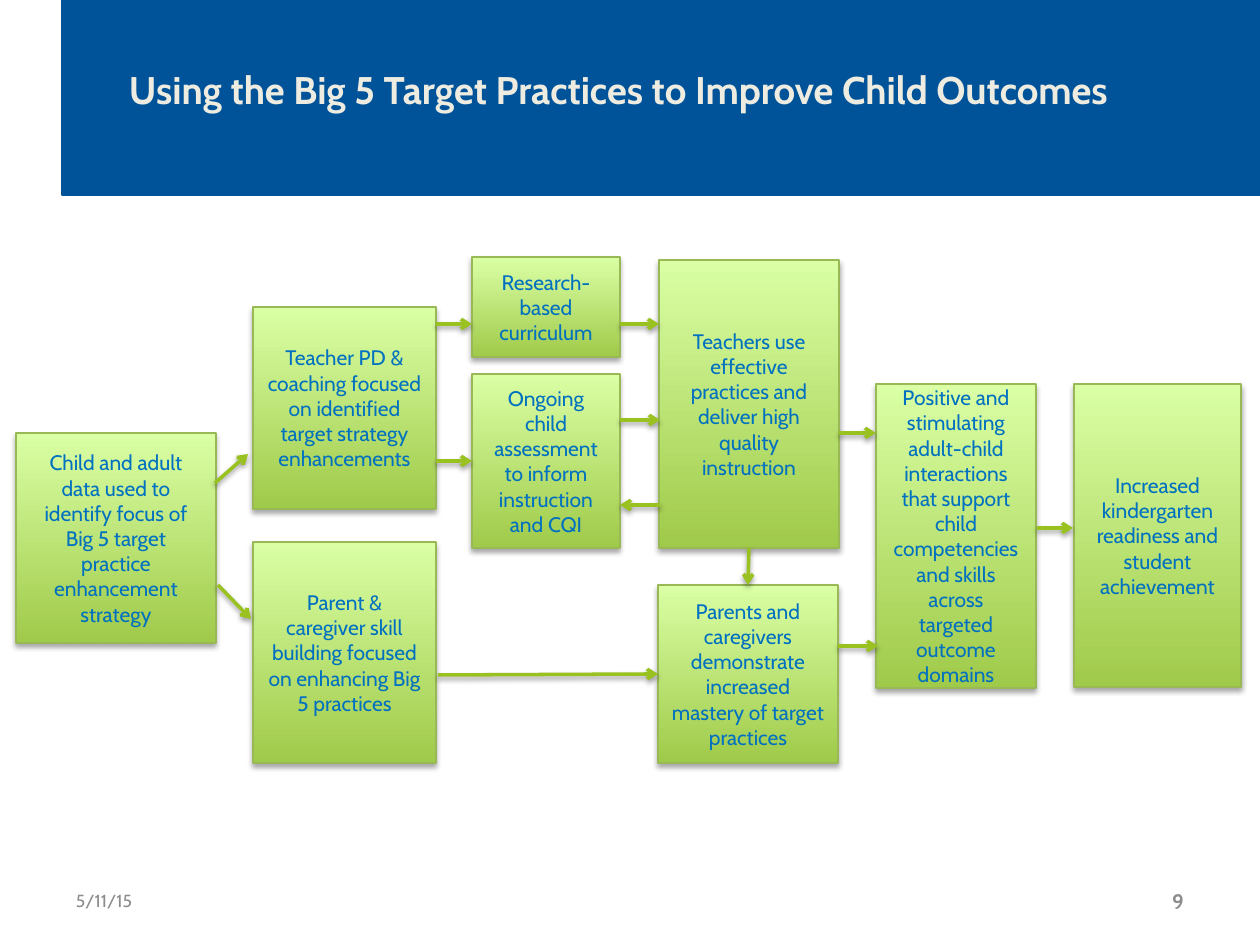
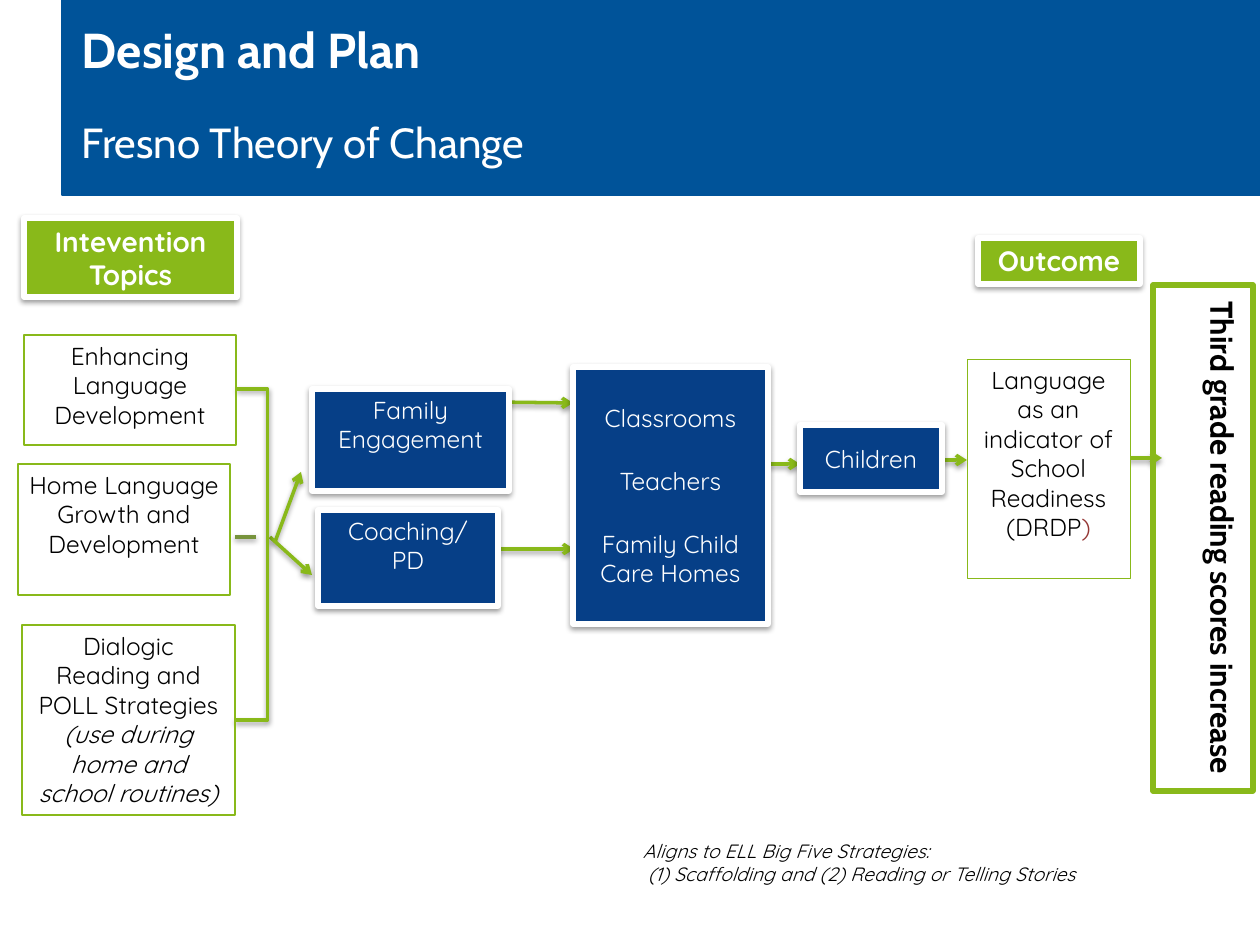
from lxml import etree
from pptx import Presentation
from pptx import util as u
from pptx.dml.color import RGBColor
from pptx.enum import shapes, text
from pptx.oxml.ns import qn

PX = u.Inches(1) / 126
WHITE, BLACK = "FFFFFF", "000000"
BAND_BLUE, NAVY, LINK_BLUE = "005399", "063F87", "0070C0"
GREEN, ARROW_GREEN, BOX_EDGE = "89B91A", "99C221", "98B955"
GRADIENT = ("A0CA4A", "DAFFA5")
TITLE_FONT, BODY_FONT = "Cabin", "Quicksand"
LEFT, CENTER, RIGHT = (text.PP_ALIGN.LEFT, text.PP_ALIGN.CENTER,
                       text.PP_ALIGN.RIGHT)
TOP, MIDDLE = text.MSO_ANCHOR.TOP, text.MSO_ANCHOR.MIDDLE


def px(*lengths):
    return [u.Emu(round(length * PX)) for length in lengths]


def rgb(hex_color):
    return RGBColor.from_string(hex_color)


def add_shadow(shape, alpha, distance):
    """Give a shape or connector a soft shadow straight below it."""
    properties = shape._element.spPr
    effects = properties.find(qn("a:effectLst"))
    if effects is None:
        effects = etree.SubElement(properties, qn("a:effectLst"))
    outer = etree.SubElement(
        effects, qn("a:outerShdw"), blurRad=str(u.Pt(3.1)),
        dist=str(u.Pt(distance)), dir="5400000", rotWithShape="0")
    black = etree.SubElement(outer, qn("a:srgbClr"), val=BLACK)
    etree.SubElement(black, qn("a:alpha"), val=str(alpha * 1000))


def style(run, size, color, font, bold=False, italic=False):
    run.font.size = u.Pt(size)
    run.font.color.rgb = rgb(color)
    run.font.name = font
    run.font.bold = bold
    run.font.italic = italic


class Deck:
    def __init__(self):
        self.presentation = Presentation()
        self.presentation.slide_width, self.presentation.slide_height = px(1260, 945)
        self.slide = None

    def add_slide(self, title_lines, at, formats, gap=0):
        """Start a slide with the blue band and its title."""
        self.slide = self.presentation.slides.add_slide(
            self.presentation.slide_layouts[5])
        band = self.rectangle((62, 0, 1198, 195), BAND_BLUE, BAND_BLUE)
        self.slide.shapes._spTree.insert(2, band._element)
        title = self.slide.shapes.title
        title.left, title.top, title.width, title.height = px(*at)
        self.set_lines(title, title_lines, 22, WHITE, TITLE_FONT,
                       align=LEFT, gap=gap)
        for paragraph, (size, color, bold) in zip(
                title.text_frame.paragraphs, formats):
            style(paragraph.runs[0], size, color, TITLE_FONT, bold)

    def set_lines(self, shape, lines, size, color, font, align=CENTER,
                  anchor=TOP, gap=0, inset=13, bold=False, italic=False):
        frame = shape.text_frame
        frame.word_wrap = True
        frame.auto_size = text.MSO_AUTO_SIZE.NONE
        frame.vertical_anchor = anchor
        frame.margin_left, frame.margin_right = px(inset, inset)
        frame.margin_top, frame.margin_bottom = px(6, 6)
        frame.text = "\n".join(lines)
        for number, paragraph in enumerate(frame.paragraphs):
            paragraph.alignment = align
            if number and gap:
                paragraph.space_before = u.Pt(gap)
            for run in paragraph.runs:
                style(run, size, color, font, bold, italic)

    def rectangle(self, at, fill, edge, weight=0.75):
        shape = self.slide.shapes.add_shape(
            shapes.MSO_SHAPE.RECTANGLE, *px(*at))
        if fill is None:
            shape.fill.background()
        elif isinstance(fill, tuple):
            shape.fill.gradient()
            shape.fill.gradient_angle = 90
            for stop, color in zip(shape.fill.gradient_stops, fill):
                stop.color.rgb = rgb(color)
        else:
            shape.fill.solid()
            shape.fill.fore_color.rgb = rgb(fill)
        shape.line.color.rgb = rgb(edge)
        shape.line.width = u.Pt(weight)
        shape.shadow.inherit = False
        return shape

    def step(self, at, *lines):
        """Add a shaded green step of the improvement process."""
        shape = self.rectangle(at, GRADIENT, BOX_EDGE)
        add_shadow(shape, 35, 1.8)
        self.set_lines(shape, lines, 12, LINK_BLUE, TITLE_FONT, anchor=MIDDLE)
        return shape

    def card(self, at, lines, fill, size=14, bold=False, **layout):
        """Add a solid box with a white frame."""
        shape = self.rectangle(at, fill, WHITE, 3)
        add_shadow(shape, 38, 1.6)
        self.set_lines(shape, lines, size, WHITE, BODY_FONT, inset=11,
                       bold=bold, **layout)

    def outlined(self, at, lines, fill=None, weight=0.75, inset=11):
        shape = self.rectangle(at, fill, GREEN, weight)
        self.set_lines(shape, lines, 14, BLACK, BODY_FONT, inset=inset)
        return shape.text_frame

    def label(self, at, lines, *look, **layout):
        box = self.slide.shapes.add_textbox(*px(*at))
        self.set_lines(box, lines, *look, **layout)
        return box.text_frame

    def connector(self, start, end, color, arrow=True,
                  kind=shapes.MSO_CONNECTOR.STRAIGHT):
        line = self.slide.shapes.add_connector(kind, *px(*start, *end))
        line.line.color.rgb = rgb(color)
        line.line.width = u.Pt(2)
        if arrow:
            etree.SubElement(line._element.spPr.find(qn("a:ln")),
                             qn("a:tailEnd"), type="arrow")
        add_shadow(line, 38, 1.6)
        return line

    def bracket(self, start, end, spine_x, color):
        """Add an elbow connector whose upright part runs at spine_x."""
        line = self.connector(start, end, color, False,
                              shapes.MSO_CONNECTOR.ELBOW)
        share = (spine_x - start[0]) / (end[0] - start[0])
        geometry = line._element.spPr.find(qn("a:prstGeom"))
        guides = geometry.find(qn("a:avLst"))
        etree.SubElement(guides, qn("a:gd"), name="adj1",
                         fmla=f"val {round(share * 100000)}")


def add_big_five(deck):
    deck.add_slide(["Using the Big 5 Target Practices to Improve Child Outcomes"],
                   (116, 60, 1019, 106), [(22, "EEECE1", True)])
    deck.step((876, 384, 160, 304),
              "Positive and stimulating adult-child interactions that support "
              "child competencies and skills across targeted outcome domains")
    deck.step((1074, 384, 167, 303),
              "Increased kindergarten readiness and student achievement")
    deck.step((16, 433, 200, 210),
              "Child and adult data used to identify focus of Big 5 target "
              "practice enhancement strategy")
    deck.step((253, 307, 183, 202),
              "Teacher PD & coaching focused on identified target strategy "
              "enhancements")
    deck.step((253, 542, 183, 221),
              "Parent & caregiver skill building focused on enhancing Big 5 "
              "practices")
    teachers = deck.step((659, 260, 180, 288),
                         "Teachers use effective practices and deliver high "
                         "quality instruction")
    parents = deck.step((658, 585, 180, 178),
                        "Parents and caregivers demonstrate increased mastery "
                        "of target practices")
    deck.step((472, 257, 148, 100), "Research-based", "curriculum")
    assessment = deck.step((472, 374, 148, 174),
                           "Ongoing child assessment to inform instruction and CQI")

    for start, end in [
            ((215, 483), (248, 454)), ((218, 585), (251, 619)),
            ((660, 505), (620, 505)), ((838, 646), (878, 646)),
            ((1037, 528), (1073, 528)), ((436, 324), (472, 324)),
            ((620, 324), (659, 324)), ((839, 433), (876, 433)),
            ((620, 420), (660, 420))]:
        deck.connector(start, end, ARROW_GREEN)
    to_assessment = deck.connector((436, 461), (472, 461), ARROW_GREEN)
    to_assessment.end_connect(assessment, 1)
    to_mastery = deck.connector((438, 675), (658, 674), ARROW_GREEN)
    to_mastery.end_connect(parents, 1)
    teachers_to_parents = deck.connector((749, 548), (748, 585), ARROW_GREEN)
    teachers_to_parents.begin_connect(teachers, 2)
    teachers_to_parents.end_connect(parents, 0)

    footer = "8C8C8C", TITLE_FONT
    deck.label((63, 876, 294, 50), ["5/11/15"], 10, *footer,
               align=LEFT, anchor=MIDDLE)
    deck.label((903, 876, 294, 50), ["9"], 12, *footer,
               align=RIGHT, anchor=MIDDLE, bold=True)


def add_theory_of_change(deck):
    deck.add_slide(["Design and Plan", "Fresno Theory of Change"],
                   (69, 13, 1090, 251),
                   [(28, WHITE, True), (24, WHITE, False)], gap=22)
    for start, end in [
            ((1125, 458), (1162, 458)), ((930, 460), (967, 460)),
            ((769, 464), (800, 464)), ((494, 549), (574, 549)),
            ((489, 402), (573, 403)), ((275, 542), (301, 472)),
            ((270, 537), (312, 575))]:
        deck.connector(start, end, GREEN)
    deck.bracket((237, 389), (235, 720), 268, GREEN)
    deck.connector((235, 537), (256, 537), "77933C", arrow=False)

    deck.card((24, 218, 213, 79), ["Intevention Topics"], GREEN, 16, True)
    deck.card((978, 238, 162, 46), ["Outcome"], GREEN, 16, True)
    deck.card((312, 389, 197, 102), ["Family", "Engagement"], NAVY)
    deck.card((318, 510, 180, 96), ["Coaching/", "PD"], NAVY)
    deck.card((573, 367, 195, 257),
              ["Classrooms", "Teachers", "Family Child Care Homes"], NAVY,
              anchor=MIDDLE, gap=19)
    deck.card((800, 425, 142, 67), ["Children"], NAVY, anchor=MIDDLE)

    deck.outlined((24, 335, 212, 110), ["Enhancing Language Development"])
    deck.outlined((18, 464, 212, 131),
                  ["Home Language", "Growth and Development"])
    dialogic = deck.outlined((22, 625, 213, 190),
                             ["Dialogic Reading and POLL Strategies "], inset=13)
    routines = dialogic.paragraphs[0].add_run()
    routines.text = "(use during home and school routines)"
    style(routines, 14, BLACK, BODY_FONT, italic=True)
    readiness = deck.outlined(
        (967, 359, 163, 219),
        ["Language as an", "indicator of School Readiness", "(DRDP"], WHITE, 0.25)
    closing = readiness.paragraphs[-1].add_run()
    closing.text = ")"
    style(closing, 14, "953735", BODY_FONT)

    scores = deck.rectangle((1153, 285, 100, 506), None, GREEN, 3)
    deck.set_lines(scores, ["Third grade reading scores increase"], 18, BLACK,
                   TITLE_FONT, inset=11, bold=True)
    scores.text_frame._txBody.bodyPr.set("vert", "vert")

    alignment = deck.label(
        (630, 833, 509, 59),
        ["Aligns to ELL Big Five Strategies:",
         "(1) Scaffolding and (2) Reading or Telling Stories"],
        11, BLACK, BODY_FONT, align=LEFT, italic=True)
    second_line = alignment.paragraphs[1]._p.get_or_add_pPr()
    second_line.set("marL", str(px(5)[0]))


def main():
    deck = Deck()
    add_big_five(deck)
    add_theory_of_change(deck)
    deck.presentation.save("out.pptx")


if __name__ == "__main__":
    main()
